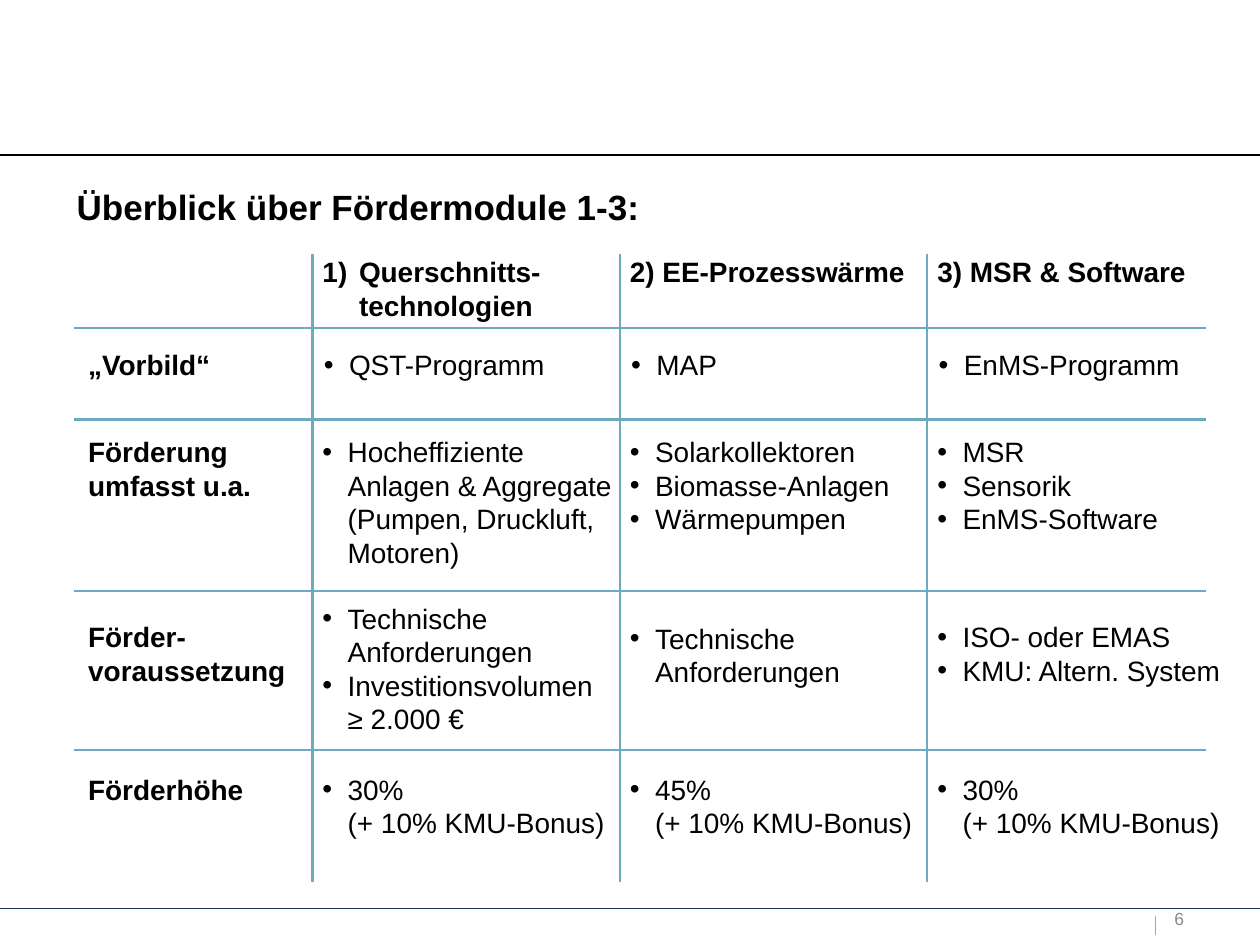
from dataclasses import dataclass

from lxml import etree
from pptx import Presentation
from pptx.dml.color import RGBColor
from pptx.enum.shapes import MSO_CONNECTOR
from pptx.enum.text import MSO_AUTO_SIZE
from pptx.oxml.ns import qn
from pptx.util import Inches, Pt

STRAIGHT = MSO_CONNECTOR.STRAIGHT
GROW = MSO_AUTO_SIZE.SHAPE_TO_FIT_TEXT
FONT = "Arial"
BLACK, NAVY, TEAL, GREY, LIGHT = "000000", "17375E", "6CAAC0", "888888", "A6A6A6"
LINE_H = 0.27
MODULE_X, MODULE_STEP = 2.56, 2.44
LABEL_X = 0.51


@dataclass
class Style:
    size: int = 16
    bold: bool = False
    color: str = BLACK
    left: float = 0
    hang: float = 0
    bullet: str = ""
    number: str = ""
    inset: bool = False


@dataclass
class Cell:
    items: list[str]
    lines: int
    top: float


@dataclass
class Row:
    label: str
    label_top: float
    label_width: float
    label_lines: int
    width: float
    cells: list[Cell]
    shift: float = 0


TITLE = Style(size=20, bold=True, inset=True)
PAGE = Style(size=10, color=GREY)
HEAD = Style(bold=True)
NUMBERED = Style(bold=True, left=0.29, hang=0.29, number="arabicParenR")
LABEL = Style(bold=True, left=0.19)
BULLETS = Style(left=0.2, hang=0.2, bullet="•")

HEADS = [
    ("Querschnitts-technologien", 2, NUMBERED),
    ("2) EE-Prozesswärme", 1, HEAD),
    ("3) MSR & Software", 1, HEAD),
]
ROWS = [
    Row("„Vorbild“", 2.76, 1.42, 1, 2.25, [
        Cell(["QST-Programm"], 1, 2.76),
        Cell(["MAP"], 1, 2.76),
        Cell(["EnMS-Programm"], 1, 2.76),
    ], shift=0.01),
    Row("Förderung umfasst u.a.", 3.45, 1.81, 2, 2.36, [
        Cell(["Hocheffiziente Anlagen & Aggregate (Pumpen, Druckluft, Motoren)"], 4, 3.45),
        Cell(["Solarkollektoren", "Biomasse-Anlagen", "Wärmepumpen"], 3, 3.45),
        Cell(["MSR", "Sensorik", "EnMS-Software"], 3, 3.45),
    ]),
    Row("Förder-voraussetzung", 4.92, 1.89, 2, 2.26, [
        Cell(["Technische Anforderungen", "Investitionsvolumen ≥ 2.000 €"], 4, 4.77),
        Cell(["Technische Anforderungen"], 2, 4.93),
        Cell(["ISO- oder EMAS", "KMU: Altern. System"], 2, 4.92),
    ]),
    Row("Förderhöhe", 6.13, 1.72, 1, 2.26, [
        Cell([f"{rate}% \n(+ 10% KMU-Bonus)"], 2, 6.13) for rate in (30, 45, 30)
    ]),
]


def rgb(value: str) -> RGBColor:
    return RGBColor.from_string(value)


def add_line(s, x1: float, y1: float, x2: float, y2: float, color: str, width: float) -> None:
    c = s.shapes.add_connector(STRAIGHT, Inches(x1), Inches(y1), Inches(x2), Inches(y2))
    c.line.color.rgb = rgb(color)
    c.line.width = Pt(width)
    etree.SubElement(c._element.spPr, qn("a:effectLst"))


def format_paragraph(p, style: Style) -> None:
    pPr = p._p.get_or_add_pPr()
    pPr.set("marL", str(Inches(style.left)))
    pPr.set("indent", str(-Inches(style.hang)))
    if style.bullet:
        etree.SubElement(pPr, qn("a:buFont"), typeface=FONT)
        etree.SubElement(pPr, qn("a:buChar"), char=style.bullet)
    elif style.number:
        etree.SubElement(pPr, qn("a:buAutoNum"), type=style.number)
    for r in p.runs:
        for name, value in {"name": FONT, "size": Pt(style.size), "bold": style.bold}.items():
            setattr(r.font, name, value)
        r.font.color.rgb = rgb(style.color)
    for br in p._p.findall(qn("a:br")):
        etree.SubElement(br, qn("a:rPr"), sz=str(style.size * 100))


def add_text(s, x: float, y: float, w: float, h: float, items: list[str], style: Style) -> None:
    sp = s.shapes.add_textbox(Inches(x), Inches(y), Inches(w), Inches(h))
    tf = sp.text_frame
    tf.word_wrap = True
    tf.auto_size = GROW
    if not style.inset:
        for side in ("left", "top", "right", "bottom"):
            setattr(tf, f"margin_{side}", 0)
    for i, item in enumerate(items):
        p = tf.add_paragraph() if i else tf.paragraphs[0]
        p.text = item.replace("\n", "\v")
        format_paragraph(p, style)


def add_row(s, row: Row) -> None:
    add_text(s, LABEL_X, row.label_top, row.label_width, row.label_lines * LINE_H,
             [row.label], LABEL)
    for i, cell in enumerate(row.cells):
        x = MODULE_X + i * MODULE_STEP + row.shift
        add_text(s, x, cell.top, row.width, cell.lines * LINE_H, cell.items, BULLETS)


def main() -> None:
    prs = Presentation()
    prs.slide_width, prs.slide_height = Inches(10), Inches(7.5)
    s = prs.slides.add_slide(prs.slide_layouts[6])

    add_line(s, 0, 1.23, 10, 1.23, BLACK, 0.75)
    add_line(s, 0, 7.21, 10, 7.21, NAVY, 0.75)
    add_line(s, 9.17, 7.27, 9.17, 7.42, LIGHT, 0.75)
    add_text(s, 9.32, 7.21, 0.64, 0.17, ["6"], PAGE)
    add_text(s, LABEL_X, 1.42, 8.9, 0.44, ["Überblick über Fördermodule 1-3:"], TITLE)

    for y in (2.6, 3.33, 4.69, 5.95):
        add_line(s, 0.59, y, 9.57, y, TEAL, 1.25)
    for i, (text, lines, style) in enumerate(HEADS):
        x = MODULE_X + i * MODULE_STEP
        add_line(s, x - 0.08, 2.02, x - 0.08, 7, TEAL, 1.25)
        add_text(s, x, 2.02, 2.36, lines * LINE_H, [text], style)
    for row in ROWS:
        add_row(s, row)

    prs.save("out.pptx")


if __name__ == "__main__":
    main()
